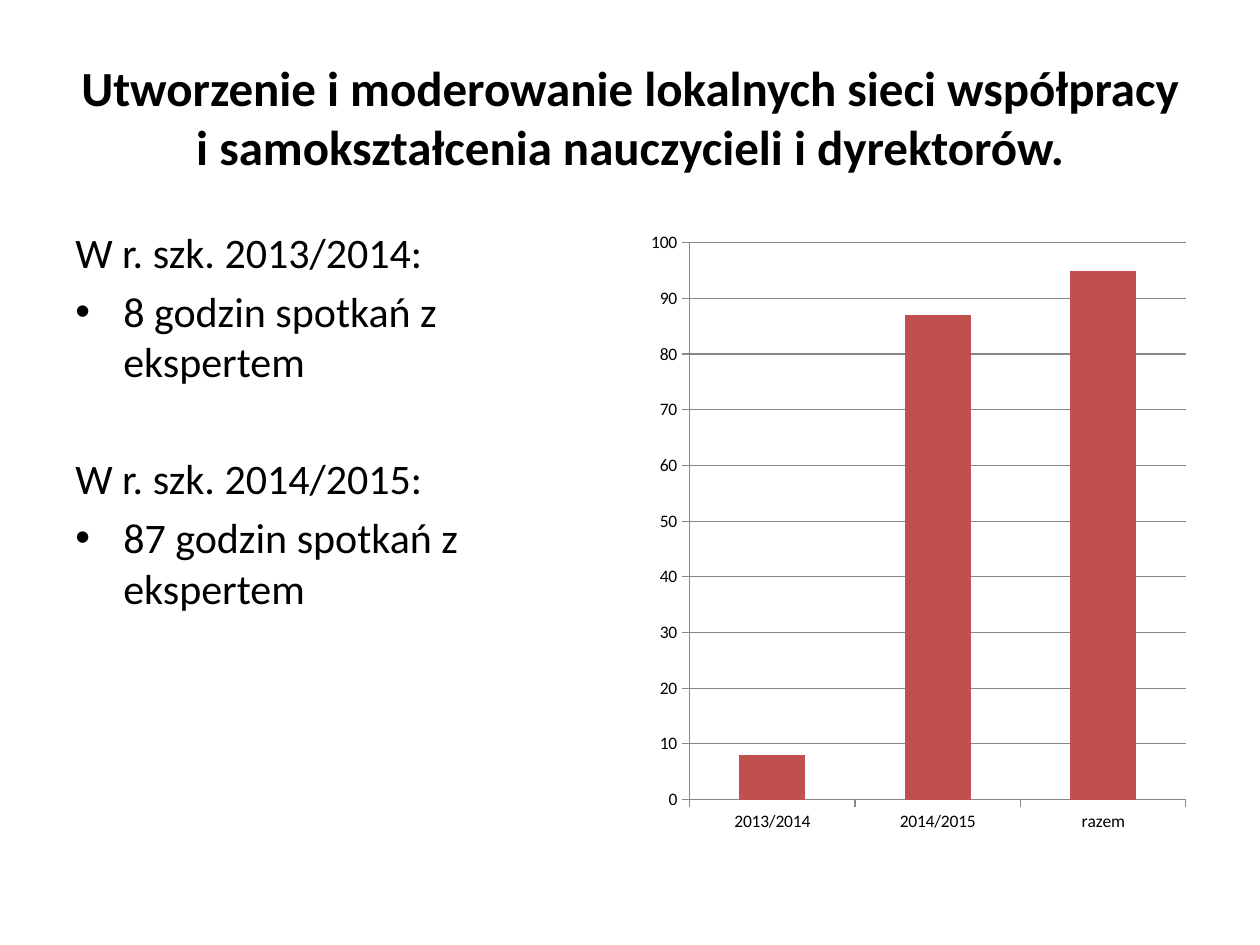
from lxml.etree import SubElement
from pptx import Presentation
from pptx.chart.data import CategoryChartData
from pptx.dml.color import RGBColor
from pptx.enum.chart import XL_CHART_TYPE, XL_TICK_MARK
from pptx.enum.text import MSO_ANCHOR, PP_ALIGN
from pptx.oxml.ns import qn
from pptx.util import Inches, Pt

FONT = "Calibri"
BLACK = "000000"
AXIS_GRAY = "878787"
BAR_RED = "C0504D"
TITLE = ("Utworzenie i moderowanie lokalnych sieci współpracy "
         "i samokształcenia nauczycieli i dyrektorów.")
MEETINGS = [
    ("W r. szk. 2013/2014:", "8 godzin spotkań z ekspertem"),
    ("W r. szk. 2014/2015:", "87 godzin spotkań z ekspertem"),
]
HOURS = {"2013/2014": 8, "2014/2015": 87, "razem": 95}
LINE_SPACE = 4.8
SECTION_SPACE = 38


def color(value):
    """Turn a hex string into a colour."""
    return RGBColor.from_string(value)


def style_font(font, size, bold=False):
    """Set the face, size, weight and colour of a font."""
    font.name = FONT
    font.size = Pt(size)
    font.bold = bold
    font.color.rgb = color(BLACK)


def add_text_frame(slide, left, top, width, height):
    """Add a wrapping text box and return its text frame."""
    shape = slide.shapes.add_textbox(
        Inches(left), Inches(top), Inches(width), Inches(height))
    shape.text_frame.word_wrap = True
    return shape.text_frame


def add_title(slide):
    """Add the centred slide title."""
    frame = add_text_frame(slide, 0.5, 0.3, 9, 1.25)
    frame.vertical_anchor = MSO_ANCHOR.MIDDLE
    paragraph = frame.paragraphs[0]
    paragraph.text = TITLE
    paragraph.alignment = PP_ALIGN.CENTER
    style_font(paragraph.font, 28, bold=True)


def write_paragraph(paragraph, text, space_before, bullet=False):
    """Write a paragraph with a hanging indent and an optional bullet."""
    paragraph.text = text
    paragraph.space_before = Pt(space_before)
    style_font(paragraph.font, 24)
    properties = paragraph._p.get_or_add_pPr()
    properties.set("marL", str(Inches(0.38)))
    properties.set("indent", str(Inches(-0.38)))
    if bullet:
        bullet_font = SubElement(properties, qn("a:buFont"), typeface="Arial")
        bullet_font.addnext(properties.makeelement(qn("a:buChar"), {"char": "•"}))
        properties.append(properties.find(qn("a:defRPr")))


def add_meetings(slide):
    """Add the meeting hours of each school year."""
    frame = add_text_frame(slide, 0.5, 1.75, 4.42, 4.95)
    for index, (year, hours) in enumerate(MEETINGS):
        heading = frame.add_paragraph() if index else frame.paragraphs[0]
        write_paragraph(heading, year, SECTION_SPACE if index else LINE_SPACE)
        write_paragraph(frame.add_paragraph(), hours, LINE_SPACE, bullet=True)


def style_axis(axis):
    """Give an axis its line and outside tick marks."""
    axis.major_tick_mark = XL_TICK_MARK.OUTSIDE
    axis.minor_tick_mark = XL_TICK_MARK.NONE
    axis.format.line.color.rgb = color(AXIS_GRAY)
    axis.format.line.width = Pt(0.75)


def add_hours_chart(slide):
    """Add the column chart of meeting hours."""
    data = CategoryChartData()
    data.categories = list(HOURS)
    data.add_series("Series 1", list(HOURS.values()))
    chart = slide.shapes.add_chart(
        XL_CHART_TYPE.COLUMN_CLUSTERED, Inches(5.08), Inches(1.75),
        Inches(4.42), Inches(4.95), data).chart
    chart.has_title = False
    chart.has_legend = False
    style_font(chart.font, 10)
    style_axis(chart.category_axis)
    style_axis(chart.value_axis)
    chart.value_axis.minimum_scale = 0
    chart.value_axis.maximum_scale = 100
    chart.value_axis.major_unit = 10
    gridlines = chart.value_axis.major_gridlines.format.line
    gridlines.color.rgb = color(AXIS_GRAY)
    gridlines.width = Pt(0.75)
    plot = chart.plots[0]
    plot.gap_width = 150
    plot.vary_by_categories = False
    fill = plot.series[0].format.fill
    fill.solid()
    fill.fore_color.rgb = color(BAR_RED)


def main():
    """Build and save the presentation."""
    presentation = Presentation()
    presentation.slide_width = Inches(10)
    presentation.slide_height = Inches(7.5)
    slide = presentation.slides.add_slide(presentation.slide_layouts[6])
    add_title(slide)
    add_meetings(slide)
    add_hours_chart(slide)
    presentation.save("out.pptx")


if __name__ == "__main__":
    main()
